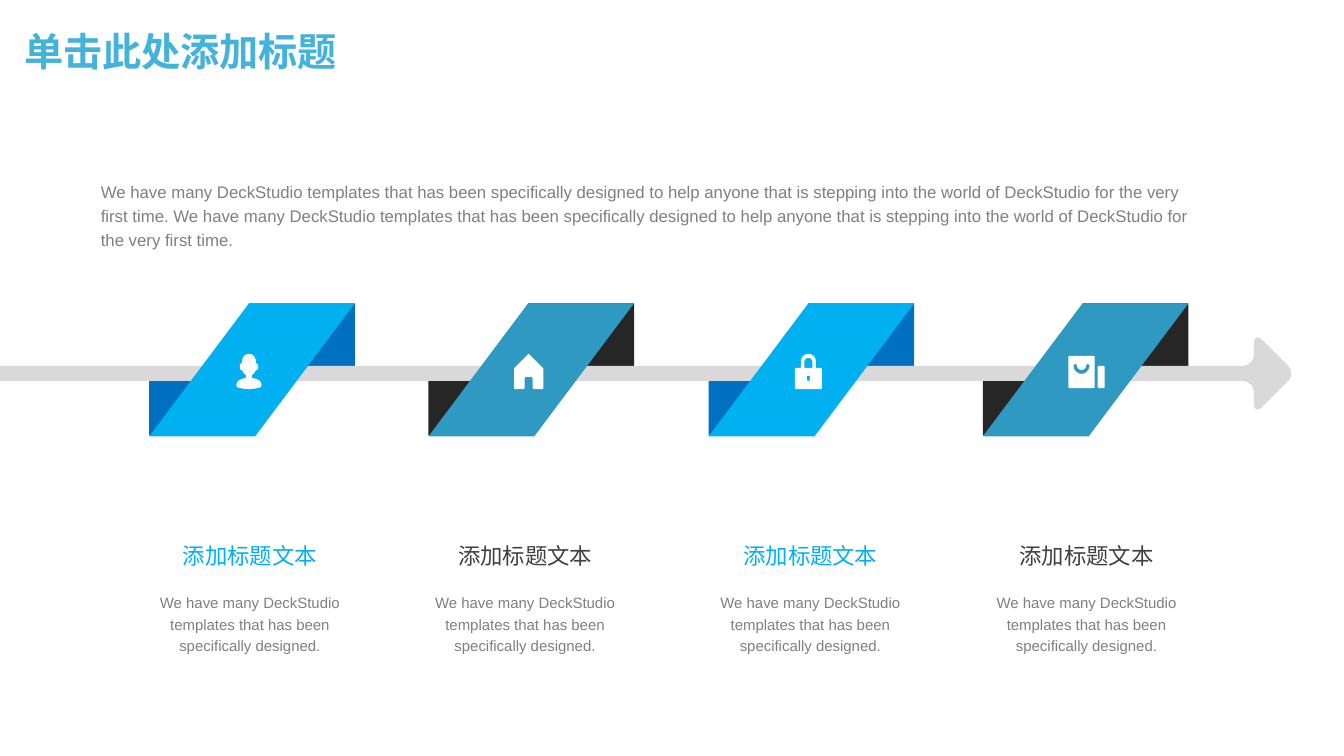
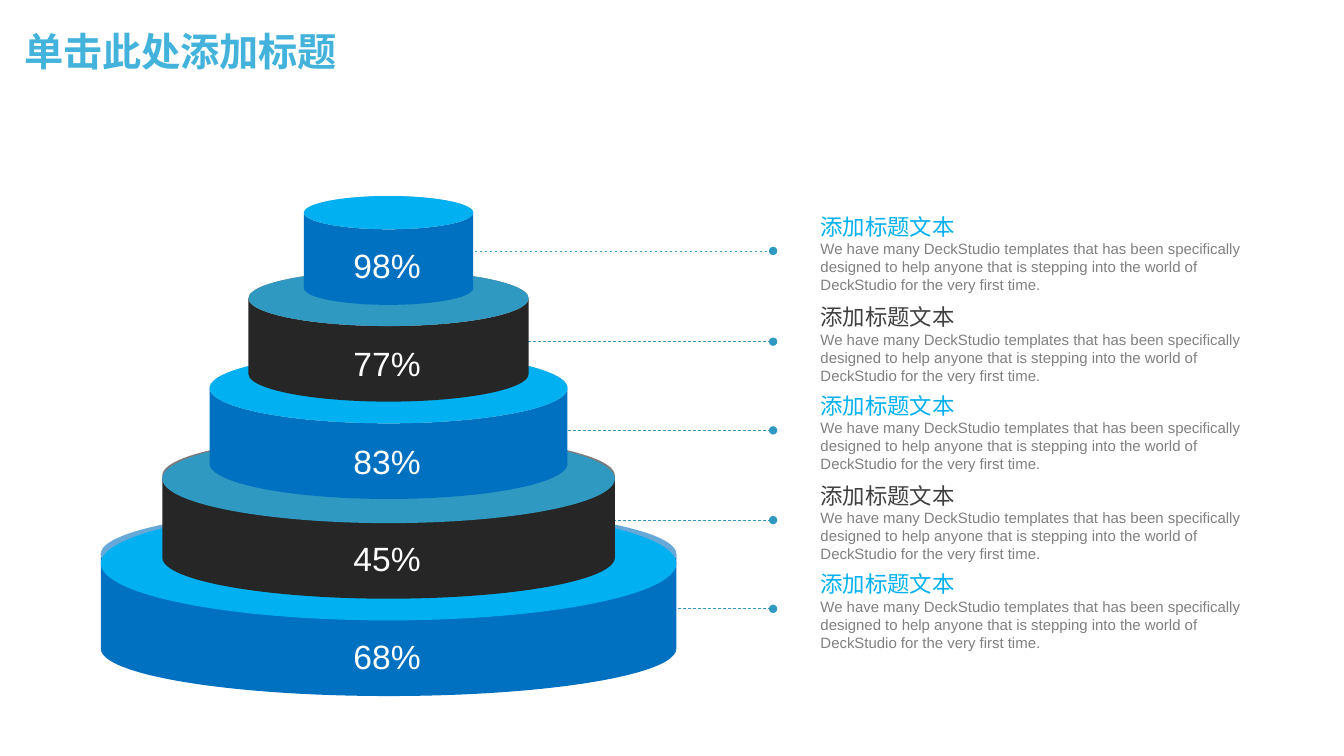
from pptx import Presentation
from pptx.dml.color import RGBColor
from pptx.enum.dml import MSO_LINE
from pptx.enum.shapes import MSO_CONNECTOR, MSO_SHAPE
from pptx.enum.text import MSO_ANCHOR, PP_ALIGN
from pptx.oxml.ns import qn
from pptx.util import Inches, Pt
from lxml.etree import SubElement

# Shared sizes, colours and fonts
PAGE_WIDTH, PAGE_HEIGHT = 40 / 3, 7.5
TITLE_BLUE = RGBColor(0x43, 0xB3, 0xDC)
SKY = RGBColor(0x00, 0xB0, 0xF0)
BLUE = RGBColor(0x00, 0x70, 0xC0)
TEAL = RGBColor(0x2F, 0x99, 0xC1)
BLACK = RGBColor(0x26, 0x26, 0x26)
DARK_GREY = RGBColor(0x40, 0x40, 0x40)
GREY = RGBColor(0x80, 0x80, 0x80)
LIGHT_GREY = RGBColor(0xD9, 0xD9, 0xD9)
WHITE = RGBColor(0xFF, 0xFF, 0xFF)
BODY_FONT, HEAD_FONT, TITLE_FONT = "Arial", "Noto Sans CJK SC", "Montserrat"

# Alternating schemes: bright face, deep side, heading
SCHEMES = [(SKY, BLUE, SKY), (TEAL, BLACK, DARK_GREY)]

# Wording
TITLE = "单击此处添加标题"
HEADING = "添加标题文本"
SHORT_TEXT = "We have many DeckStudio templates that has been specifically designed."
LONG_TEXT = ("We have many DeckStudio templates that has been specifically designed "
             "to help anyone that is stepping into the world of DeckStudio "
             "for the very first time.")

# Icons: a list of parts, each a list of contours given as
# (axis, right half) in hundredths of an inch;
# two numbers make a line, six make a cubic curve
USER = [[(0, [(0, 35), (7, 35, 12, 33, 12, 33), (12.5, 31), (12, 29),
              (12, 26, 5, 24, 3, 24), (3, 21), (5, 20, 6, 18, 7, 16),
              (8, 16, 9, 16, 9, 14), (9, 12, 9, 10, 8, 10), (7, 9),
              (7, 3, 4, 0, 0, 0)])]]
HOUSE = [[(0.5, [(0, 0), (1, 1), (14, 14), (14.5, 15), (14.5, 34), (14, 35),
                 (5, 35), (4, 34), (4, 24), (3, 23), (0, 23)])]]
LOCK = [[(0, [(0, 0), (5, 0, 7.5, 4, 7.5, 8), (7.5, 14), (12.5, 14),
              (13.5, 15), (13.5, 34), (12.5, 35), (0, 35)]),
         (0, [(0, 4), (2.5, 4, 4, 6, 4, 8), (4, 14), (0, 14)]),
         (0, [(0, 22), (1.5, 22), (1.5, 26), (0.5, 27), (0, 27)])]]
NEWS = [[(-1, [(0, 2), (12.5, 2), (13, 3), (13, 33), (12.5, 34), (0, 34)]),
         (-1, [(0, 20), (4, 20, 8, 16.5, 8, 12), (8, 9.5, 4.5, 9.5, 4.5, 12),
               (4.5, 14.5, 2, 16, 0, 16)])],
        [(18.5, [(0, 12), (2.5, 12), (3.5, 13), (3.5, 33), (2.5, 34), (0, 34)])]]


def trace(steps):
    """Turn lines and cubic curves into a list of points."""
    points = [steps[0]]
    for step in steps[1:]:
        if len(step) == 2:
            points.append(step)
            continue
        controls = [points[-1], step[:2], step[2:4], step[4:]]
        for part in range(1, 5):
            t = part / 4
            weights = ((1 - t) ** 3, 3 * t * (1 - t) ** 2, 3 * t * t * (1 - t), t ** 3)
            points.append(tuple(sum(w * c[axis] for w, c in zip(weights, controls))
                                for axis in (0, 1)))
    return points


def paint(shape, color):
    shape.shadow.inherit = False
    shape.fill.solid()
    shape.fill.fore_color.rgb = color
    shape.line.fill.background()
    return shape


def add_block(shapes, kind, left, top, width, height, color):
    block = shapes.add_shape(kind, Inches(left), Inches(top), Inches(width), Inches(height))
    return paint(block, color)


def add_outline(shapes, contours, color):
    builder = None
    for contour in contours:
        points = [(Inches(x), Inches(y)) for x, y in contour]
        if builder is None:
            builder = shapes.build_freeform(*points[0], scale=1.0)
        else:
            builder.move_to(*points[0])
        builder.add_line_segments(points[1:], close=True)
    return paint(builder.convert_to_shape(), color)


def add_text(page, left, top, width, height, lines, align=PP_ALIGN.LEFT,
             spacing=1.0, gap=0):
    """Lines are (text, font, size, colour); gap is the space between them."""
    box = page.shapes.add_textbox(Inches(left), Inches(top), Inches(width), Inches(height))
    frame = box.text_frame
    frame.word_wrap = True
    frame.margin_left = frame.margin_right = frame.margin_top = frame.margin_bottom = 0
    frame.text = "\n".join(line[0] for line in lines)
    for index, (para, line) in enumerate(zip(frame.paragraphs, lines)):
        para.alignment = align
        para.line_spacing = spacing
        if index and gap:
            para.space_before = Pt(gap)
        span = para.runs[0]
        span.font.name, span.font.size = line[1], Pt(line[2])
        span.font.color.rgb = line[3]
        SubElement(span.font._element, qn("a:ea")).set("typeface", HEAD_FONT)
    return frame


# Shared by both slides: translucent panel and title
def add_page(deck):
    page = deck.slides.add_slide(deck.slide_layouts[6])
    panel = add_block(page.shapes, MSO_SHAPE.RECTANGLE, 0, 0.84,
                      PAGE_WIDTH, PAGE_HEIGHT - 0.84, WHITE)
    tint = panel._element.spPr.find(qn("a:solidFill"))[0]
    SubElement(tint, qn("a:alpha")).set("val", "88000")
    frame = add_text(page, 0.14, 0.14, 11.5, 0.79,
                     [(TITLE, TITLE_FONT, 28, TITLE_BLUE)], spacing=0.9)
    frame.margin_left = frame.margin_right = Inches(0.1)
    frame.vertical_anchor = MSO_ANCHOR.MIDDLE
    frame.paragraphs[0].runs[0].font.bold = True
    return page


# Timeline parts
def add_timeline_arrow(page):
    axis = 3.705
    upper = trace([(0, 3.63), (12.33, 3.63), (12.39, 3.63, 12.44, 3.58, 12.44, 3.52),
                   (12.44, 3.4), (12.44, 3.34, 12.48, 3.33, 12.52, 3.37),
                   (12.78, 3.63), (12.8, 3.65, 12.81, 3.68, 12.81, axis)])
    lower = [(x, 2 * axis - y) for x, y in reversed(upper)]
    add_outline(page.shapes, [upper + lower], LIGHT_GREY)


def add_icon(page, center, top, icon):
    for part in icon:
        contours = []
        for axis, half in part:
            right = trace(half)
            whole = right + [(-x, y) for x, y in reversed(right)]
            contours.append([(center + (axis + x) / 100, top + y / 100) for x, y in whole])
        add_outline(page.shapes, contours, WHITE)


def add_ribbon(page, left, icon, color):
    ribbon = add_block(page.shapes, MSO_SHAPE.PARALLELOGRAM, left, 3.01, 2.04, 1.32, color)
    ribbon.adjustments[0] = 0.75
    add_icon(page, left + 0.99, 3.51, icon)


def build_timeline(deck):
    page = add_page(deck)
    steps = [(1.48, 1.48, USER), (4.25, 4.21, HOUSE), (7.03, 7.04, LOCK), (9.75, 9.78, NEWS)]
    schemes = SCHEMES * 2
    # Folded ends lie behind the arrow, ribbons in front of it
    for (left, _, _), (_, deep, _) in zip(steps, schemes):
        for shift, top in ((0, 3.64), (0.99, 3.01)):
            add_block(page.shapes, MSO_SHAPE.RECTANGLE, left + shift, top, 1.05, 0.68, deep)
    add_timeline_arrow(page)
    for (left, text_left, icon), (bright, _, heading) in zip(steps, schemes):
        add_ribbon(page, left, icon, bright)
        add_text(page, text_left, 5.33, 2, 1.19,
                 [(HEADING, HEAD_FONT, 16, heading), (SHORT_TEXT, BODY_FONT, 10.7, GREY)],
                 PP_ALIGN.CENTER, spacing=1.2, gap=14.8)
    add_text(page, 1, 1.76, 11.02, 0.73,
             [(f"{LONG_TEXT} {LONG_TEXT}", BODY_FONT, 12, GREY)], spacing=1.2)


# Cake parts
def add_leader(page, start, y):
    leader = page.shapes.add_connector(MSO_CONNECTOR.STRAIGHT, Inches(start), Inches(y),
                                       Inches(7.67), Inches(y))
    leader.line.color.rgb = TEAL
    leader.line.width = Pt(0.5)
    leader.line.dash_style = MSO_LINE.DASH
    properties = leader._element.spPr
    SubElement(properties.find(qn("a:ln")), qn("a:tailEnd")).set("type", "oval")
    SubElement(properties, qn("a:effectLst"))


def add_tier(page, y, width, depth, face, side):
    left, top = 3.855 - width / 2, y - depth / 2
    height = 0.75 + depth
    tier = page.shapes.add_group_shape().shapes
    body = add_block(tier, MSO_SHAPE.CAN, left, top, width, height, side)
    body.adjustments[0] = depth / min(width, height)
    add_block(tier, MSO_SHAPE.OVAL, left, top, width, depth, face)


def build_cake(deck):
    page = add_page(deck)
    # From top to bottom: share, centre, width and depth of the face, leader start and height
    tiers = [("98%", 2.11, 1.68, 0.33, 4.56, 2.49), ("77%", 2.96, 2.78, 0.55, 4.69, 3.39),
             ("83%", 3.85, 3.55, 0.7, 4.69, 4.27), ("45%", 4.75, 4.49, 0.88, 4.69, 5.16),
             ("68%", 5.59, 5.71, 1.13, 4.69, 6.04)]
    rows = [(*tier, *SCHEMES[index % 2]) for index, tier in enumerate(tiers)]
    for _, _, _, _, start, level, *_ in rows:
        add_leader(page, start, level)
    for _, y, width, depth, _, _, face, side, _ in reversed(rows):
        add_tier(page, y, width, depth, face, side)
    for index, (share, *_, level, _, _, heading) in enumerate(rows):
        add_text(page, 3.12, 2.43 + 0.97 * index, 1.44, 0.4,
                 [(share, BODY_FONT, 24, WHITE)], PP_ALIGN.CENTER)
        add_text(page, 8.14, level - 0.38, 4.2, 0.81,
                 [(HEADING, HEAD_FONT, 16, heading), (LONG_TEXT, BODY_FONT, 10.7, GREY)])


def main():
    deck = Presentation()
    deck.slide_width, deck.slide_height = Inches(PAGE_WIDTH), Inches(PAGE_HEIGHT)
    build_timeline(deck)
    build_cake(deck)
    deck.save("out.pptx")


if __name__ == "__main__":
    main()
